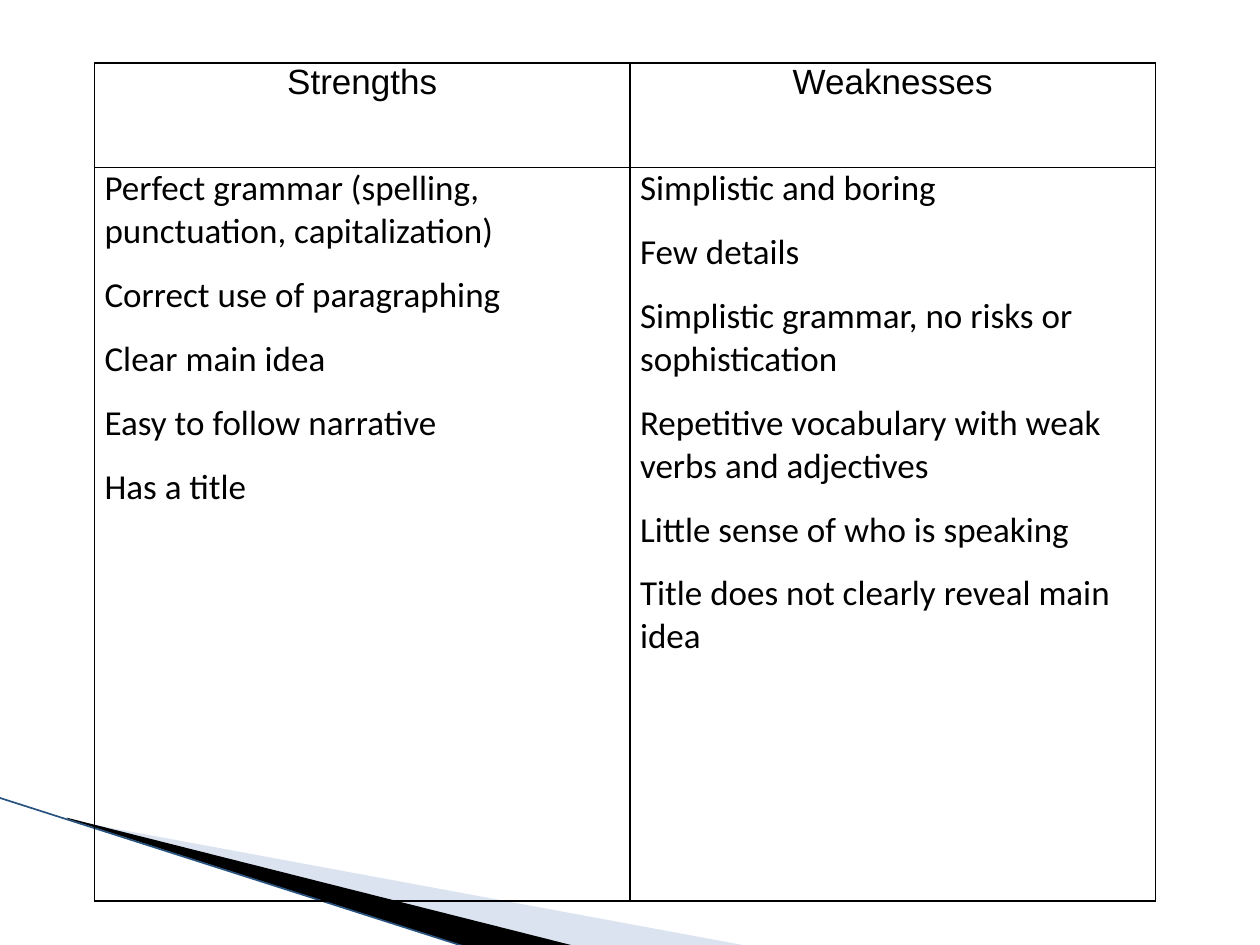
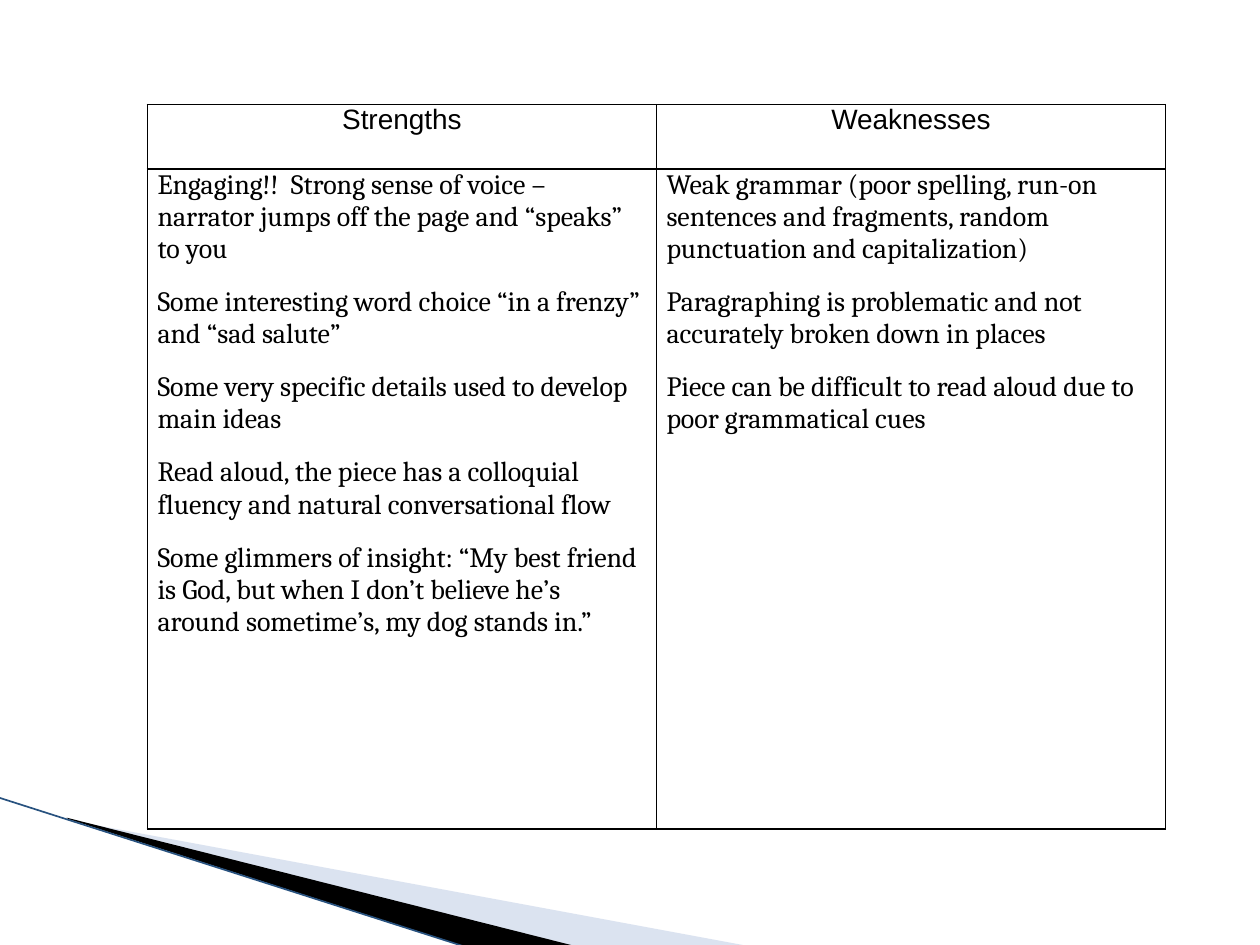
from lxml import etree
from pptx import Presentation
from pptx.dml.color import RGBColor
from pptx.enum.shapes import MSO_CONNECTOR
from pptx.enum.text import PP_ALIGN
from pptx.oxml import parse_xml
from pptx.oxml.ns import nsdecls, qn
from pptx.util import Inches, Pt

BLACK = "000000"
PALE_BLUE = "A7B9DB"
EDGE_BLUE = "28527F"

HEADINGS = ["Strengths", "Weaknesses"]
WEDGES = [
    (PALE_BLUE, [(0.55, 6.51), (5.95, 7.51), (4.56, 7.51), (0.55, 6.5)]),
    (BLACK, [(0.53, 6.49), (4.57, 7.51), (3.72, 7.52), (0.54, 6.5)]),
]
REVIEWS = [
    {
        "corner": (0.75, 0.5), "columns": [4.25, 4.17], "rows": [0.83, 5.82],
        "size": 20, "font": "Calibri",
        "points": [
            [
                "Perfect grammar (spelling, punctuation, capitalization)",
                "Correct use of paragraphing",
                "Clear main idea",
                "Easy to follow narrative",
                "Has a title",
            ],
            [
                "Simplistic and boring",
                "Few details",
                "Simplistic grammar, no risks or sophistication",
                "Repetitive vocabulary with weak verbs and adjectives",
                "Little sense of who is speaking",
                "Title does not clearly reveal main idea",
            ],
        ],
    },
    {
        "corner": (1.17, 0.83), "columns": [4.04, 4.04], "rows": [0.51, 5.24],
        "size": 16, "font": "Cambria",
        "points": [
            [
                "Engaging!!  Strong sense of voice – narrator jumps off the page and “speaks” to you",
                "Some interesting word choice “in a frenzy” and “sad salute”",
                "Some very specific details used to develop main ideas",
                "Read aloud, the piece has a colloquial fluency and natural conversational flow",
                "Some glimmers of insight: “My best friend is God, but when I don’t believe he’s "
                "around sometime’s, my dog stands in.”",
            ],
            [
                "Weak grammar (poor spelling, run-on sentences and fragments, random "
                "punctuation and capitalization)",
                "Paragraphing is problematic and not accurately broken down in places",
                "Piece can be difficult to read aloud due to poor grammatical cues",
            ],
        ],
    },
]


def color(hex_string):
    return RGBColor.from_string(hex_string)


def fill_cell(cell, lines, font_name, size, align):
    """Write one paragraph per line into an unfilled cell with black borders."""
    cell.margin_left = cell.margin_right = Inches(0.08)
    cell.margin_top = cell.margin_bottom = 0
    properties = cell._tc.get_or_add_tcPr()
    for side in "LRTB":
        properties.append(parse_xml(
            f'<a:ln{side} {nsdecls("a")} w="12700"><a:solidFill>'
            f'<a:srgbClr val="{BLACK}"/></a:solidFill></a:ln{side}>'))
    cell.fill.background()
    cell.text = "\n".join(lines)
    for paragraph in cell.text_frame.paragraphs:
        paragraph.alignment = align
        paragraph.space_after = Pt(12)
        paragraph.font.name = font_name
        paragraph.font.size = Pt(size)
        paragraph.font.color.rgb = color(BLACK)


presentation = Presentation()
presentation.slide_width = Inches(10)
presentation.slide_height = Inches(7.5)
blank_layout = presentation.slide_layouts[6]
for placeholder in list(blank_layout.placeholders):
    placeholder._element.getparent().remove(placeholder._element)
slides = [presentation.slides.add_slide(blank_layout) for review in REVIEWS]

# Corner wedges: drawn once, then moved to the layout that the slides share
corner_shapes = []
for fill, points in WEDGES:
    start, *others = [(Inches(x), Inches(y)) for x, y in points]
    builder = slides[0].shapes.build_freeform(*start)
    builder.add_line_segments(others)
    wedge = builder.convert_to_shape()
    wedge.shadow.inherit = False
    wedge.fill.solid()
    wedge.fill.fore_color.rgb = color(fill)
    wedge.line.fill.background()
    corner_shapes.append(wedge)
pale_fill = next(corner_shapes[0]._element.spPr.iter(qn("a:srgbClr")))
etree.SubElement(pale_fill, qn("a:alpha"), val="40000")

edge = slides[0].shapes.add_connector(
    MSO_CONNECTOR.STRAIGHT, Inches(-0.01), Inches(6.33), Inches(3.71), Inches(7.52))
edge.line.color.rgb = color(EDGE_BLUE)
edge.line.width = Pt(0.95)
etree.SubElement(edge._element.spPr, qn("a:effectLst"))
corner_shapes.append(edge)
for shape in corner_shapes:
    blank_layout.shapes._spTree.append(shape._element)

# Strengths and weaknesses tables
for slide, review in zip(slides, REVIEWS):
    left, top = review["corner"]
    columns, rows = review["columns"], review["rows"]
    table = slide.shapes.add_table(
        2, 2, Inches(left), Inches(top), Inches(sum(columns)), Inches(sum(rows))).table
    table.first_row = table.horz_banding = False
    for row, height in zip(table.rows, rows):
        row.height = Inches(height)
    for index, width in enumerate(columns):
        table.columns[index].width = Inches(width)
        fill_cell(table.cell(0, index), [HEADINGS[index]], "Arial", review["size"], PP_ALIGN.CENTER)
        fill_cell(table.cell(1, index), review["points"][index], review["font"], review["size"], PP_ALIGN.LEFT)

presentation.save("out.pptx")
